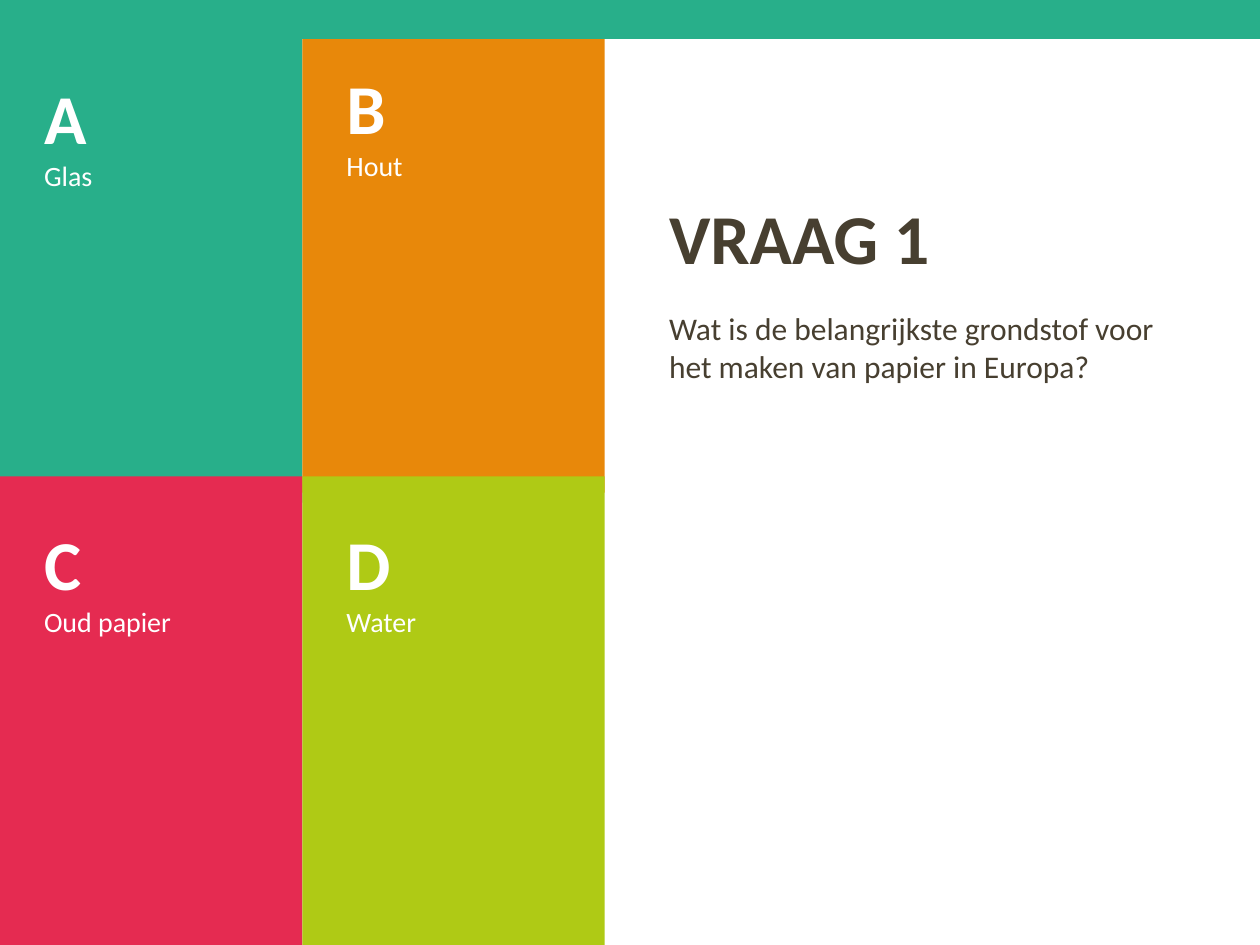
from dataclasses import dataclass

from lxml.etree import SubElement
from pptx import Presentation
from pptx.dml.color import RGBColor
from pptx.enum.shapes import MSO_SHAPE
from pptx.enum.text import MSO_ANCHOR, MSO_AUTO_SIZE, PP_ALIGN
from pptx.oxml.ns import qn
from pptx.util import Inches, Pt


@dataclass(frozen=True)
class Theme:
    font: str = "Calibri"
    ink: str = "473F30"
    light: str = "FFFFFF"
    green: str = "28AF8A"
    orange: str = "E8880A"
    red: str = "E52B51"
    lime: str = "AFCA15"
    heading: int = 40
    question: int = 18
    answer: int = 16
    padding: float = 0.35


def write(para, text, *, theme, size, color, bold=False, before=0):
    para.alignment = PP_ALIGN.LEFT
    para.space_before = Pt(before)
    span = para.add_run()
    span.text = text
    span.font.name = theme.font
    span.font.size = Pt(size)
    span.font.bold = bold
    span.font.color.rgb = RGBColor.from_string(color)


class QuizPage:
    """One slide on a grid of 100 columns by 75 rows."""

    COLUMNS, ROWS = 100, 75

    def __init__(self, deck, theme):
        self.deck, self.theme = deck, theme
        self.page = deck.slides.add_slide(deck.slide_layouts[1])

    def place(self, box, column, row, columns, rows):
        cell_width = self.deck.slide_width / self.COLUMNS
        cell_height = self.deck.slide_height / self.ROWS
        box.left, box.width = int(column * cell_width), int(columns * cell_width)
        box.top, box.height = int(row * cell_height), int(rows * cell_height)

    def fill_placeholder(self, box, area, text, anchor, **style):
        self.place(box, *area)
        frame = box.text_frame
        frame.word_wrap = True
        frame.auto_size = MSO_AUTO_SIZE.NONE
        frame.vertical_anchor = anchor
        write(frame.paragraphs[0], text, theme=self.theme,
              color=self.theme.ink, **style)
        return frame.paragraphs[0]

    def title(self, text, area):
        self.fill_placeholder(self.page.shapes.title, area, text,
                              MSO_ANCHOR.BOTTOM, size=self.theme.heading, bold=True)

    def question(self, text, area):
        size = self.theme.question
        para = self.fill_placeholder(self.page.placeholders[1], area, text,
                                     MSO_ANCHOR.TOP, size=size, before=0.2 * size)
        properties = para._p.get_or_add_pPr()
        properties.set("marL", "0")
        properties.set("indent", "0")
        SubElement(properties, qn("a:buNone"))

    def block(self, area, color):
        box = self.page.shapes.add_shape(MSO_SHAPE.RECTANGLE, 0, 0, 0, 0)
        self.place(box, *area)
        box.shadow.inherit = False
        box.fill.solid()
        box.fill.fore_color.rgb = RGBColor.from_string(color)
        box.line.fill.background()
        return box

    def answer(self, letter, text, area, color):
        theme = self.theme
        frame = self.block(area, color).text_frame
        frame.word_wrap = True
        frame.vertical_anchor = MSO_ANCHOR.TOP
        frame.margin_left = frame.margin_right = Inches(theme.padding)
        frame.margin_top = frame.margin_bottom = Inches(theme.padding)
        write(frame.paragraphs[0], letter, theme=theme, size=theme.heading,
              color=theme.light, bold=True)
        write(frame.add_paragraph(), text, theme=theme, size=theme.answer,
              color=theme.light)


def main():
    deck = Presentation()
    deck.slide_width, deck.slide_height = Inches(10), Inches(7.5)
    theme = Theme()
    quiz = QuizPage(deck, theme)

    quiz.title("VRAAG 1", (52.1, 13.1, 42.8, 9.5))
    quiz.question("Wat is de belangrijkste grondstof voor het maken van papier in Europa?",
                  (52.1, 24, 42.8, 24.9))

    tile_columns, tile_rows = 24, 37.5
    answers = [
        ("A", "Glas", 0, 2.4, theme.green),
        ("B", "Hout", 1, 1.6, theme.orange),
        ("C", "Oud papier", 0, 37.8, theme.red),
        ("D", "Water", 1, 37.8, theme.lime),
    ]
    for letter, text, tile, row, color in answers:
        area = (tile * tile_columns, row, tile_columns, tile_rows)
        quiz.answer(letter, text, area, color)
    quiz.block((0, 0, quiz.COLUMNS, 3.1), theme.green)

    deck.save("out.pptx")


if __name__ == "__main__":
    main()
